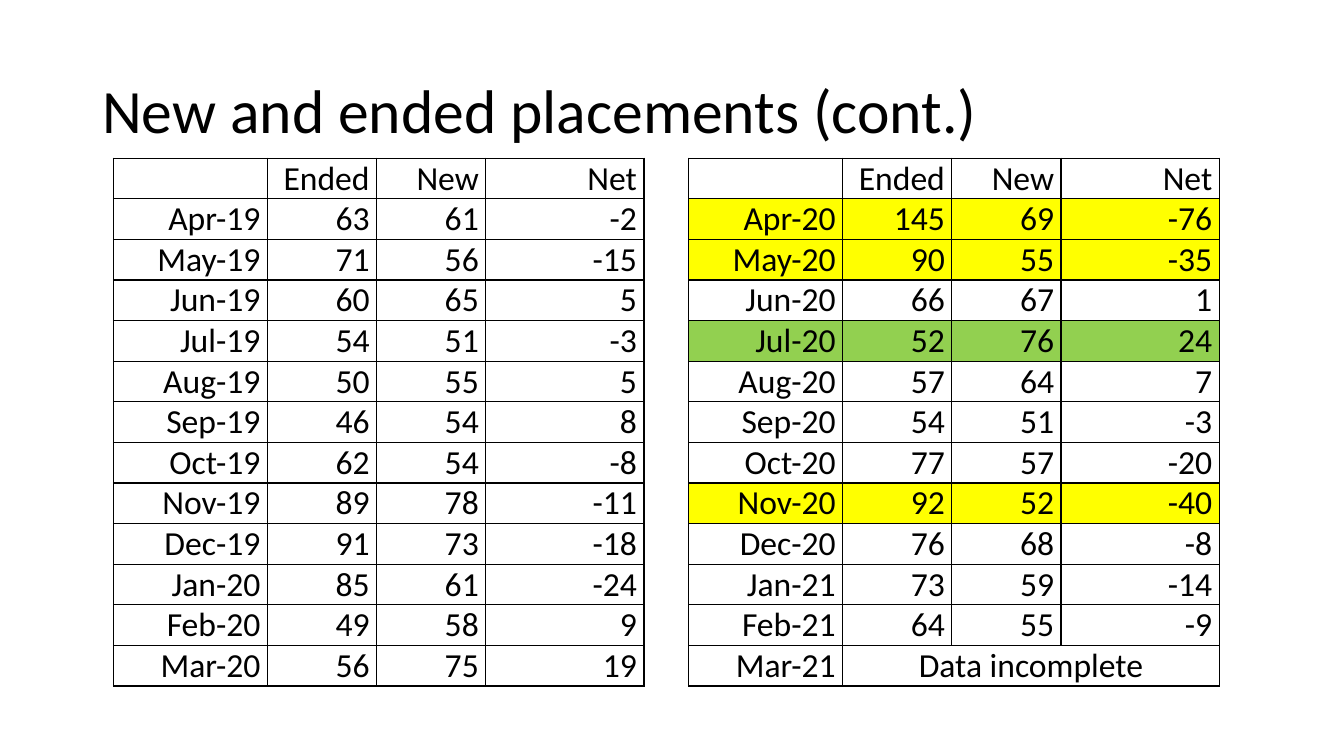
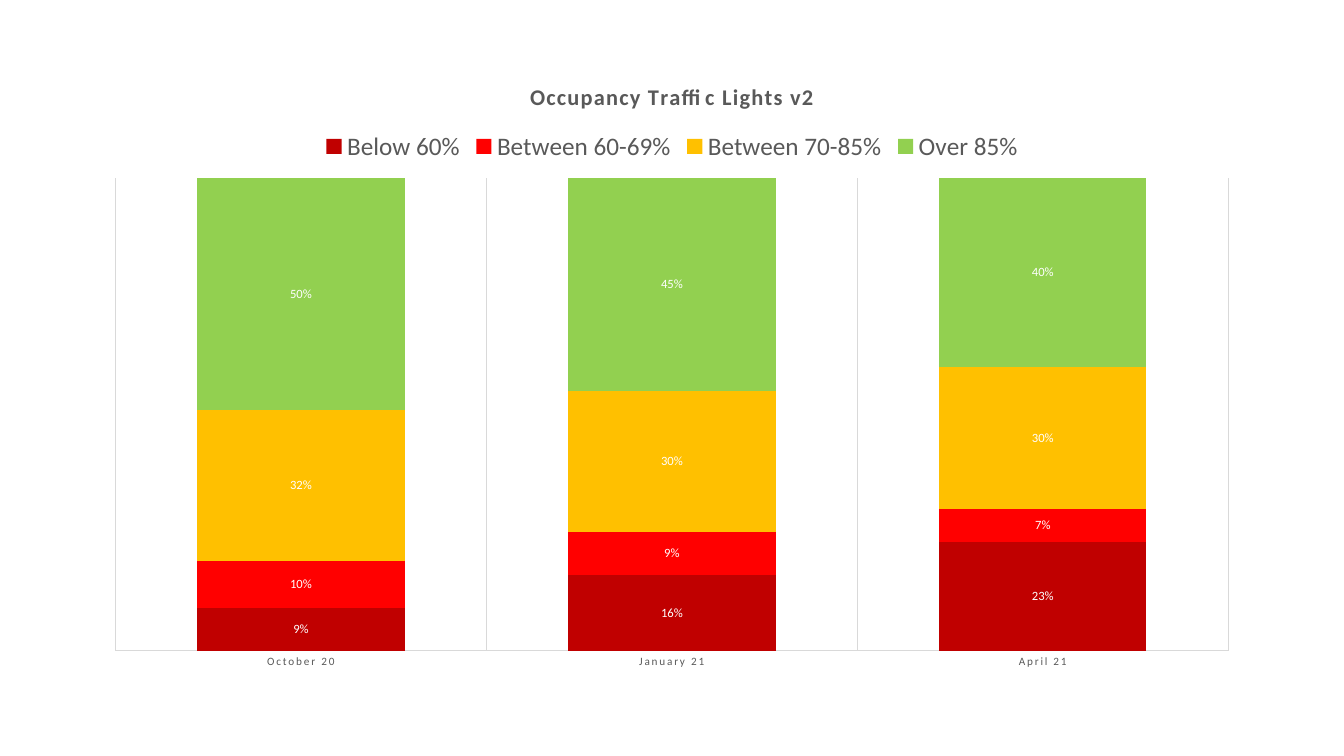
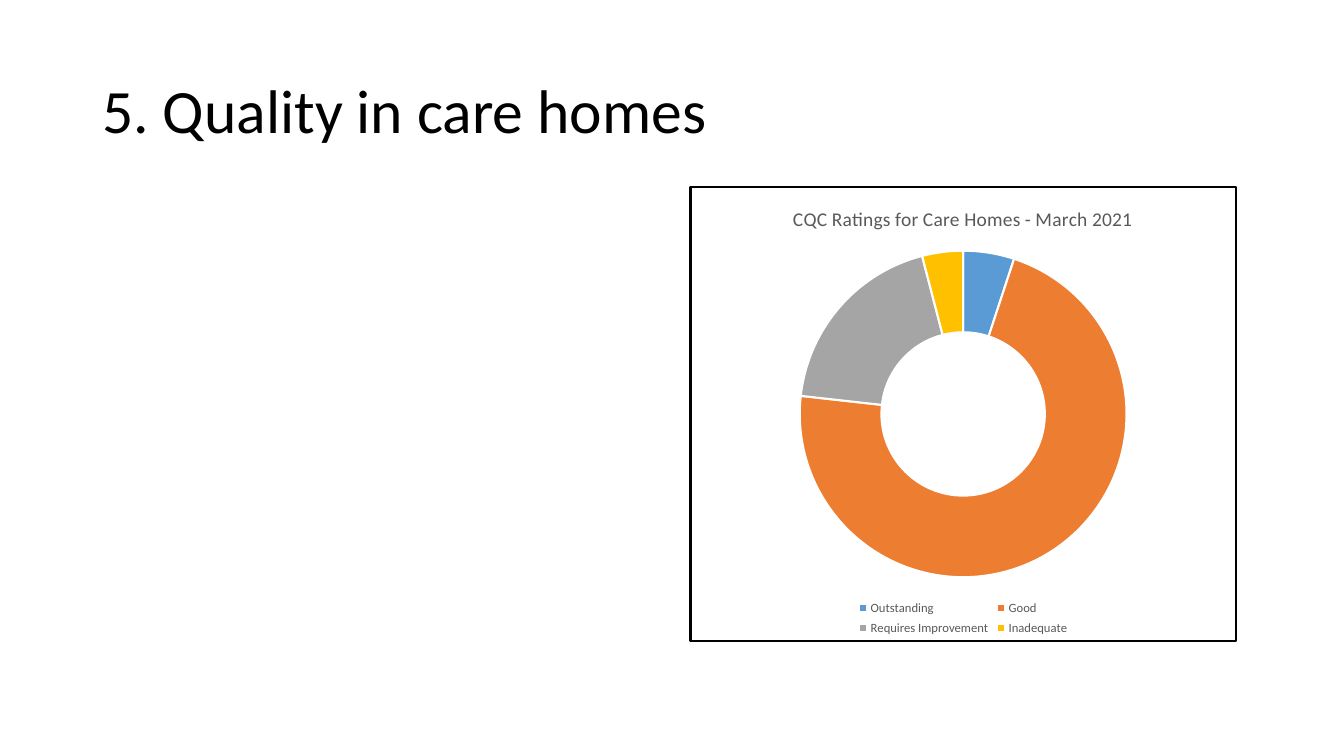
import dataclasses

import lxml.etree
import pptx
import pptx.chart.data
import pptx.dml.color
import pptx.enum.chart
import pptx.enum.text
import pptx.oxml
import pptx.oxml.ns
import pptx.util

Pt = pptx.util.Pt
qn = pptx.oxml.ns.qn


@dataclasses.dataclass(frozen=True)
class Theme:
    font: str = "Calibri"
    black: str = "000000"
    white: str = "FFFFFF"
    muted: str = "595959"
    rule: str = "D9D9D9"
    fall: str = "FFFF00"
    rise: str = "92D050"
    traffic: tuple = ("C00000", "FF0000", "FFC000", "92D050")
    ratings: tuple = ("5B9BD5", "ED7D31", "A5A5A5", "FFC000")
    title_size: float = 44
    table_size: float = 24
    large_legend_size: float = 18
    wide_chart_title_size: float = 16
    chart_title_size: float = 14
    chart_size: float = 10
    small_size: float = 9
    axis_size: float = 8


THEME = Theme()

# Boxes: left, top, width, height in points
TITLE_BOX = (66, 29, 828, 104)
TABLE_BOX = (81, 113, 790, 377)
OCCUPANCY_BOX = (66, 43, 828, 444)
RATINGS_BOX = (492.5, 133, 391, 325.5)

HEADINGS = ["", "Ended", "New", "Net"]
COLUMN_WIDTHS = [110, 78, 78, 113]
GAP_WIDTH = 32

FIRST_YEAR = [
    ("Apr-19", 63, 61, -2), ("May-19", 71, 56, -15), ("Jun-19", 60, 65, 5),
    ("Jul-19", 54, 51, -3), ("Aug-19", 50, 55, 5), ("Sep-19", 46, 54, 8),
    ("Oct-19", 62, 54, -8), ("Nov-19", 89, 78, -11), ("Dec-19", 91, 73, -18),
    ("Jan-20", 85, 61, -24), ("Feb-20", 49, 58, 9), ("Mar-20", 56, 75, 19),
]
SECOND_YEAR = [
    ("Apr-20", 145, 69, -76), ("May-20", 90, 55, -35), ("Jun-20", 66, 67, 1),
    ("Jul-20", 52, 76, 24), ("Aug-20", 57, 64, 7), ("Sep-20", 54, 51, -3),
    ("Oct-20", 77, 57, -20), ("Nov-20", 92, 52, -40), ("Dec-20", 76, 68, -8),
    ("Jan-21", 73, 59, -14), ("Feb-21", 64, 55, -9),
    ("Mar-21", "Data incomplete", "", ""),
]
HIGHLIGHTS = {"Apr-20": THEME.fall, "May-20": THEME.fall,
              "Jul-20": THEME.rise, "Nov-20": THEME.fall}

OCCUPANCY_DATES = ["October 20", "January 21", "April 21"]
OCCUPANCY = {
    "Below 60%": (0.09, 0.16, 0.23),
    "Between 60-69%": (0.1, 0.09, 0.07),
    "Between 70-85%": (0.32, 0.3, 0.3),
    "Over 85%": (0.5, 0.45, 0.4),
}
RATINGS = {"Outstanding": 5, "Good": 71, "Requires Improvement": 19, "Inadequate": 4}


# Shared helpers
def rgb(color):
    return pptx.dml.color.RGBColor.from_string(color)


def points(box):
    return [Pt(length) for length in box]


def style_font(font, size, color, bold=False):
    font.name = THEME.font
    font.size = Pt(size)
    font.bold = bold
    font.color.rgb = rgb(color)


def paint(fill, color):
    fill.solid()
    fill.fore_color.rgb = rgb(color)


def draw_line(line, color, width):
    line.color.rgb = rgb(color)
    line.width = Pt(width)


def space_letters(properties, spacing):
    properties.set("spc", str(round(spacing * 100)))


def add_title(slide, box, text):
    shape = slide.shapes.add_textbox(*points(box))
    text_frame = shape.text_frame
    text_frame.word_wrap = True
    text_frame.vertical_anchor = pptx.enum.text.MSO_ANCHOR.MIDDLE
    text_frame.text = text
    paragraph = text_frame.paragraphs[0]
    paragraph.line_spacing = 0.9
    style_font(paragraph.runs[0].font, THEME.title_size, THEME.black)


# Table
def set_borders(cell, visible_sides):
    properties = cell._tc.get_or_add_tcPr()
    for position, side in enumerate("LRTB"):
        border = lxml.etree.Element(qn(f"a:ln{side}"), w=str(Pt(1)))
        if side in visible_sides:
            fill = lxml.etree.SubElement(border, qn("a:solidFill"))
            lxml.etree.SubElement(fill, qn("a:srgbClr"), val=THEME.black)
        else:
            lxml.etree.SubElement(border, qn("a:noFill"))
        properties.insert(position, border)


def fill_cell(cell, text, color, alignment, visible_sides):
    cell.margin_left = cell.margin_right = Pt(5)
    cell.margin_top = cell.margin_bottom = 0
    cell.vertical_anchor = pptx.enum.text.MSO_ANCHOR.BOTTOM
    if color:
        paint(cell.fill, color)
    else:
        cell.fill.background()
    set_borders(cell, visible_sides)
    paragraph = cell.text_frame.paragraphs[0]
    paragraph.text = str(text)
    paragraph.alignment = alignment
    for run in paragraph.runs:
        style_font(run.font, THEME.table_size, THEME.black)


def add_placement_table(slide, box):
    align = pptx.enum.text.PP_ALIGN
    left_rows, right_rows = [HEADINGS] + FIRST_YEAR, [HEADINGS] + SECOND_YEAR
    widths = COLUMN_WIDTHS + [GAP_WIDTH] + COLUMN_WIDTHS
    gap_index = len(COLUMN_WIDTHS)
    table = slide.shapes.add_table(len(left_rows), len(widths), *points(box)).table
    table.first_row = table.horz_banding = False
    for column, width in zip(table.columns, widths):
        column.width = Pt(width)
    for row_index, (left, right) in enumerate(zip(left_rows, right_rows)):
        table.rows[row_index].height = Pt(box[3] / len(left_rows))
        for column_index, text in enumerate([*left, "", *right]):
            color = HIGHLIGHTS.get(right[0]) if column_index > gap_index else None
            alignment = align.CENTER if text == "Data incomplete" else align.RIGHT
            sides = "LR" if column_index == gap_index else "LRTB"
            fill_cell(table.cell(row_index, column_index), text, color, alignment, sides)
    last_row = len(left_rows) - 1
    table.cell(last_row, gap_index + 2).merge(table.cell(last_row, len(widths) - 1))


# Charts
def add_layout(parent, box, inner=False):
    """Place a chart part by fractions of the chart's width and height."""
    for old_layout in parent.findall(qn("c:layout")):
        parent.remove(old_layout)
    layout = lxml.etree.Element(qn("c:layout"))
    manual = lxml.etree.SubElement(layout, qn("c:manualLayout"))
    settings = [("layoutTarget", "inner")] if inner else []
    settings += [("xMode", "edge"), ("yMode", "edge"), *zip("xywh", box)]
    for name, value in settings:
        lxml.etree.SubElement(manual, qn(f"c:{name}"), val=str(value))
    position = parent.find(qn("c:legendPos"))
    if position is None:
        parent.insert(0, layout)
    else:
        position.addnext(layout)


def add_chart(slide, box, kind, data, title, title_size, bold, legend_position,
              legend_size, plot_box):
    chart = slide.shapes.add_chart(kind, *points(box), data).chart
    style_font(chart.font, THEME.chart_size, THEME.black)
    chart.has_title = True
    chart.chart_title.include_in_layout = False
    paragraph = chart.chart_title.text_frame.paragraphs[0]
    paragraph.text = title
    style_font(paragraph.runs[0].font, title_size, THEME.muted, bold)
    chart.has_legend = True
    chart.legend.position = legend_position
    chart.legend.include_in_layout = False
    style_font(chart.legend.font, legend_size, THEME.muted)
    add_layout(chart.element.find(".//" + qn("c:plotArea")), plot_box, inner=True)
    return chart


def add_occupancy_chart(slide, box):
    enums = pptx.enum.chart
    data = pptx.chart.data.CategoryChartData(number_format="0%")
    data.categories = OCCUPANCY_DATES
    for name, values in OCCUPANCY.items():
        data.add_series(name, values)
    chart = add_chart(slide, box, enums.XL_CHART_TYPE.COLUMN_STACKED, data,
                      "Occupancy Traffic Lights v2", THEME.wide_chart_title_size, True,
                      enums.XL_LEGEND_POSITION.TOP, THEME.large_legend_size,
                      (0.02, 0.19, 0.96, 0.76))
    title_run = chart.chart_title.text_frame.paragraphs[0].runs[0]
    space_letters(title_run.font._element, 1)

    # Axes
    value_axis = chart.value_axis
    value_axis.minimum_scale, value_axis.maximum_scale = 0, 1
    value_axis.has_major_gridlines = False
    value_axis.visible = False
    category_axis = chart.category_axis
    category_axis.major_tick_mark = enums.XL_TICK_MARK.NONE
    category_axis.has_major_gridlines = True
    draw_line(category_axis.major_gridlines.format.line, THEME.rule, 0.75)
    draw_line(category_axis.format.line, THEME.rule, 0.75)
    axis_font = category_axis.tick_labels.font
    style_font(axis_font, THEME.axis_size, THEME.muted)
    space_letters(axis_font._element, 1.2)

    # Bars
    plot = chart.plots[0]
    plot.gap_width, plot.overlap = 79, 100
    plot.vary_by_categories = False
    for series, color in zip(plot.series, THEME.traffic):
        paint(series.format.fill, color)
        labels = series.data_labels
        labels.show_value = True
        labels.number_format = "0%"
        labels.number_format_is_linked = False
        labels.position = enums.XL_LABEL_POSITION.CENTER
        style_font(labels.font, THEME.small_size, THEME.white)


def frame_chart(chart, fill, border, width):
    properties = pptx.oxml.parse_xml(
        f'<c:spPr {pptx.oxml.ns.nsdecls("c", "a")}>'
        f'<a:solidFill><a:srgbClr val="{fill}"/></a:solidFill>'
        f'<a:ln w="{Pt(width)}"><a:solidFill><a:srgbClr val="{border}"/>'
        '</a:solidFill></a:ln></c:spPr>')
    chart.element.find(qn("c:chart")).addnext(properties)


def add_ratings_chart(slide, box):
    enums = pptx.enum.chart
    data = pptx.chart.data.CategoryChartData()
    data.categories = list(RATINGS)
    data.add_series("Series 1", list(RATINGS.values()))
    chart = add_chart(slide, box, enums.XL_CHART_TYPE.DOUGHNUT, data,
                      "CQC Ratings for Care Homes - March 2021",
                      THEME.chart_title_size, False,
                      enums.XL_LEGEND_POSITION.BOTTOM, THEME.small_size,
                      (0.2, 0.14, 0.6, 0.72))
    add_layout(chart.legend._element, (0.3, 0.9, 0.4, 0.1))
    frame_chart(chart, THEME.white, THEME.black, 1.5)
    plot = chart.plots[0]
    plot.vary_by_categories = True
    for index, color in enumerate(THEME.ratings):
        point_format = plot.series[0].points[index].format
        paint(point_format.fill, color)
        draw_line(point_format.line, THEME.white, 1.5)


# Slides
def build_placements(slide):
    add_title(slide, TITLE_BOX, "New and ended placements (cont.)")
    add_placement_table(slide, TABLE_BOX)


def build_occupancy(slide):
    add_occupancy_chart(slide, OCCUPANCY_BOX)


def build_quality(slide):
    add_title(slide, TITLE_BOX, "5. Quality in care homes")
    add_ratings_chart(slide, RATINGS_BOX)


def main():
    presentation = pptx.Presentation()
    presentation.slide_width, presentation.slide_height = Pt(960), Pt(540)
    blank_layout = presentation.slide_layouts[6]
    for build in (build_placements, build_occupancy, build_quality):
        build(presentation.slides.add_slide(blank_layout))
    presentation.save("out.pptx")


if __name__ == "__main__":
    main()
